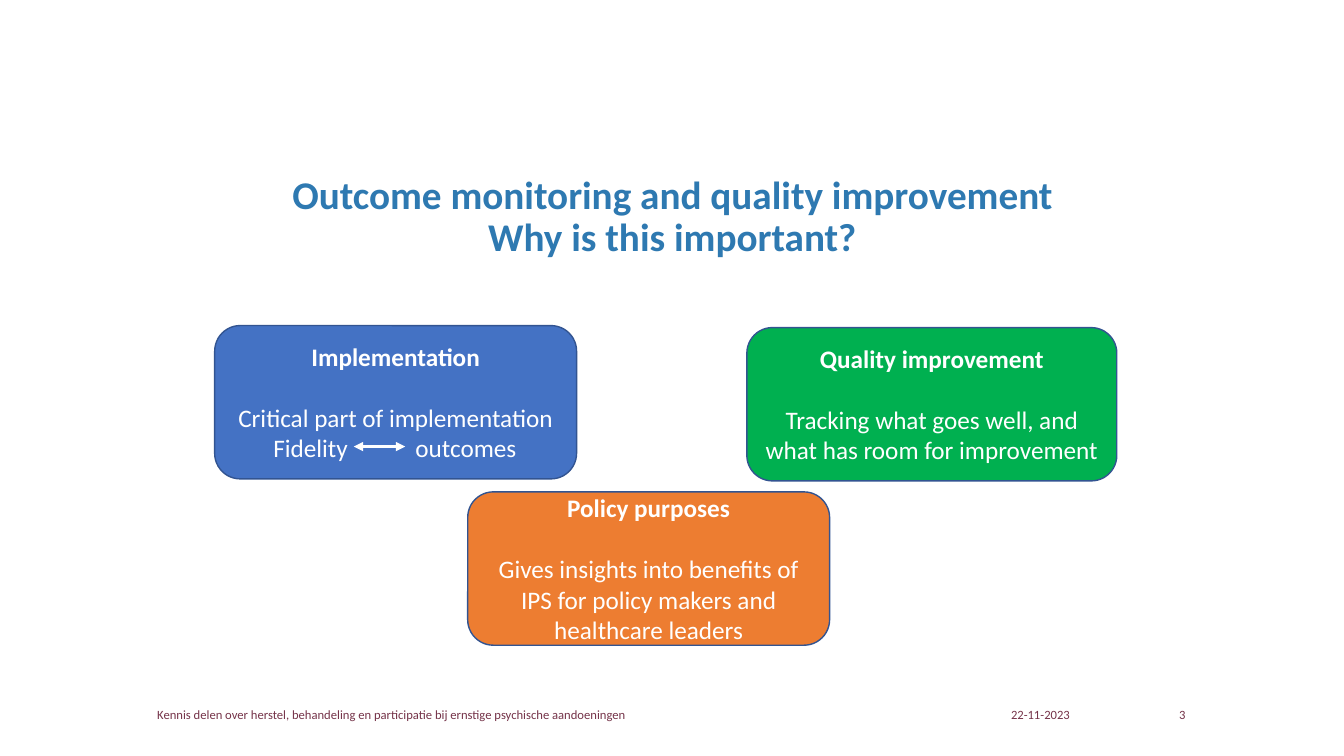
"""Build the slide on why outcome monitoring matters."""
from lxml import etree
from pptx import Presentation
from pptx import util as u
from pptx.dml.color import RGBColor
from pptx.enum import shapes, text
from pptx.oxml.ns import qn

FONT = "Calibri"
WHITE = "FFFFFF"
CARD_LINE = "325491"
CARD_HEIGHT = 109.5


def color(hex_code):
    return RGBColor.from_string(hex_code)


def box(left, top, width, height):
    return [u.Pt(length) for length in (left, top, width, height)]


def style(paragraph, size, hex_code, bold=False, align=text.PP_ALIGN.CENTER):
    paragraph.alignment = align
    font = paragraph.font
    font.name, font.size, font.bold = FONT, u.Pt(size), bold
    font.color.rgb = color(hex_code)


def set_tabs(paragraph, stops):
    tabs = etree.SubElement(paragraph._p.get_or_add_pPr(), qn("a:tabLst"))
    for stop in stops:
        etree.SubElement(tabs, qn("a:tab"), pos=str(u.Pt(stop)), algn="l")


def add_title(slide, wording):
    title = slide.shapes.title
    title.left, title.top, title.width, title.height = box(113.76, 113.04, 732.96, 84.96)
    frame = title.text_frame
    frame.auto_size = text.MSO_AUTO_SIZE.NONE
    frame.vertical_anchor = text.MSO_ANCHOR.MIDDLE
    frame.text = wording
    paragraph = frame.paragraphs[0]
    paragraph.line_spacing = 0.9
    style(paragraph, 28, "2E79B1", bold=True)


def add_footer(slide, wording, left, width, align):
    frame = slide.shapes.add_textbox(*box(left, 496.08, width, 28.8)).text_frame
    frame.word_wrap = True
    frame.vertical_anchor = text.MSO_ANCHOR.MIDDLE
    frame.margin_left = frame.margin_right = frame.margin_top = frame.margin_bottom = 0
    frame.text = wording
    style(frame.paragraphs[0], 9, "753349", align=align)


def add_card(slide, left, top, width, fill, heading, body):
    card = slide.shapes.add_shape(
        shapes.MSO_SHAPE.ROUNDED_RECTANGLE, *box(left, top, width, CARD_HEIGHT))
    card.shadow.inherit = False
    card.fill.solid()
    card.fill.fore_color.rgb = color(fill)
    card.line.color.rgb = color(CARD_LINE)
    card.line.width = u.Pt(1)
    frame = card.text_frame
    frame.word_wrap = True
    frame.vertical_anchor = text.MSO_ANCHOR.MIDDLE
    frame.text = heading
    style(frame.paragraphs[0], 18, WHITE, bold=True)
    paragraph = frame.add_paragraph()
    paragraph.text = body
    paragraph.space_before = u.Pt(22)
    style(paragraph, 18, WHITE)
    return card


def add_tabbed_line(card, wording, stops):
    paragraph = card.text_frame.add_paragraph()
    paragraph.text = wording
    set_tabs(paragraph, stops)
    style(paragraph, 18, WHITE, align=text.PP_ALIGN.LEFT)


def add_double_arrow(slide, left, right, y):
    arrow = slide.shapes.add_connector(
        shapes.MSO_CONNECTOR.STRAIGHT, u.Pt(left), u.Pt(y), u.Pt(right), u.Pt(y))
    arrow.line.color.rgb = color(WHITE)
    arrow.line.width = u.Pt(2.25)
    line = arrow.line._get_or_add_ln()
    for end in ("a:headEnd", "a:tailEnd"):
        etree.SubElement(line, qn(end), type="triangle")
    etree.SubElement(arrow._element.spPr, qn("a:effectLst"))


def main():
    presentation = Presentation()
    presentation.slide_width, presentation.slide_height = u.Pt(960), u.Pt(540)
    slide = presentation.slides.add_slide(presentation.slide_layouts[5])

    add_title(slide, "Outcome monitoring and quality improvement\vWhy is this important?")
    add_footer(slide, "22-11-2023", 722.16, 56.88, text.PP_ALIGN.LEFT)
    add_footer(slide, "3", 807.12, 39.6, text.PP_ALIGN.RIGHT)
    add_footer(
        slide,
        "Kennis delen over herstel, behandeling en participatie bij ernstige "
        "psychische aandoeningen",
        95.04, 368.64, text.PP_ALIGN.CENTER)

    implementation = add_card(
        slide, 153.36, 232.56, 258.5, "4472C4",
        "Implementation", "Critical part of implementation")
    add_tabbed_line(implementation, "\tFidelity\toutcomes", (29.5, 131))
    add_card(
        slide, 533.52, 234, 264.24, "00B050",
        "Quality improvement",
        "Tracking what goes well, and what has room for improvement")
    add_card(
        slide, 334.08, 351.36, 258.5, "ED7D31",
        "Policy purposes",
        "Gives insights into benefits of IPS for policy makers and healthcare leaders")
    add_double_arrow(slide, 252.72, 289.44, 318.96)

    presentation.save("out.pptx")


if __name__ == "__main__":
    main()
